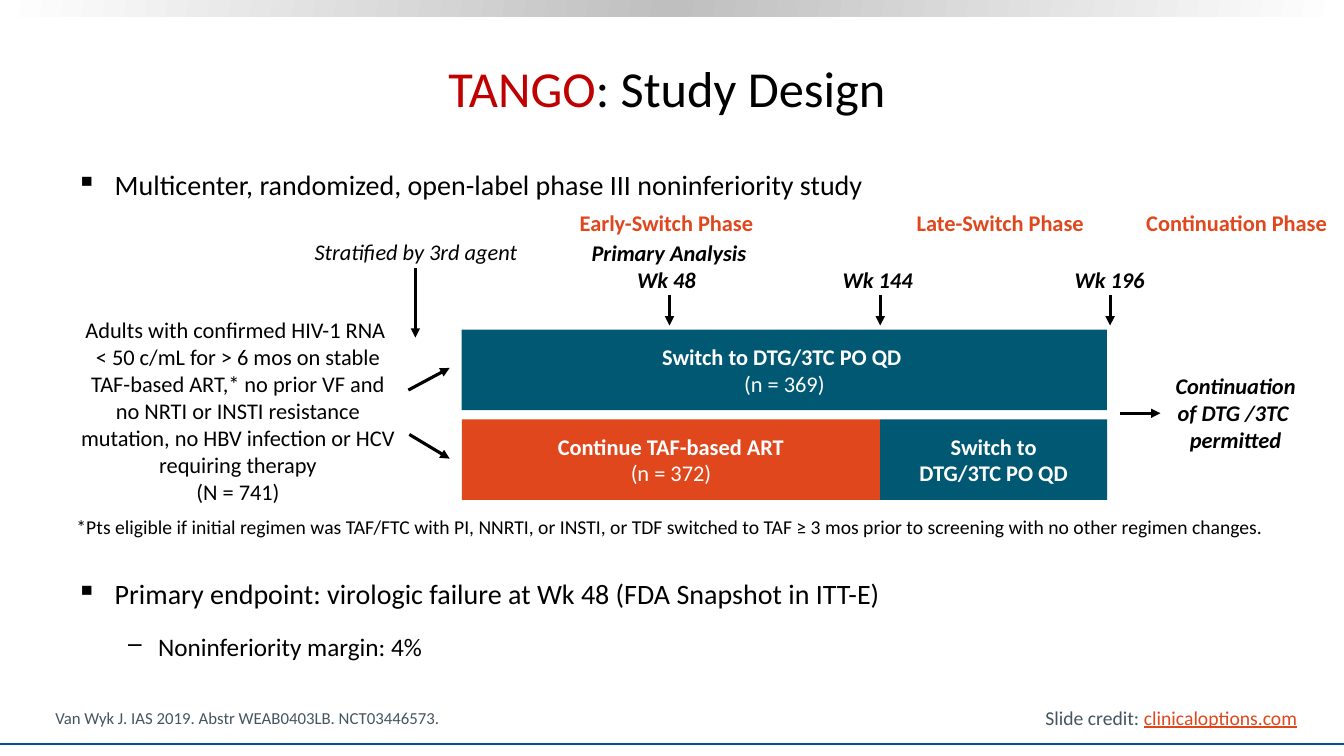
from copy import deepcopy
from dataclasses import dataclass, field

from lxml import etree
from pptx import Presentation
from pptx.dml.color import RGBColor
from pptx.enum.shapes import MSO_CONNECTOR, MSO_SHAPE
from pptx.enum.text import MSO_ANCHOR, PP_ALIGN
from pptx.oxml import parse_xml
from pptx.oxml.ns import nsdecls, qn
from pptx.util import Inches, Pt

RECT = MSO_SHAPE.RECTANGLE
STRAIGHT = MSO_CONNECTOR.STRAIGHT
LEFT, CENTER = PP_ALIGN.LEFT, PP_ALIGN.CENTER
TOP, MIDDLE, BOTTOM = MSO_ANCHOR.TOP, MSO_ANCHOR.MIDDLE, MSO_ANCHOR.BOTTOM

BLACK, WHITE, RED = "000000", "FFFFFF", "C00000"
TEAL, ORANGE, SLATE, BLUE = "015873", "E1471D", "455560", "00539B"
FONT = "Calibri"
WIDTH, HEIGHT = 13.33, 7.5

BOLD = {"bold": True}
PLAIN = {"bold": False}
ITALIC = {"italic": True}
BOLD_ITALIC = BOLD | ITALIC


@dataclass
class Run:
    text: str
    format: dict = field(default_factory=dict)
    color: str = ""


@dataclass
class Bullet:
    char: str
    margin: float
    hang: float


@dataclass
class Para:
    runs: list[Run]
    bullet: Bullet | None = None
    size: float = 0


@dataclass
class Label:
    x: float
    y: float
    w: float
    h: float
    paras: list[Para]
    size: float = 16
    color: str = BLACK
    align: PP_ALIGN = CENTER
    anchor: MSO_ANCHOR = TOP
    wrap: bool = True
    format: dict = field(default_factory=dict)
    fill: str = ""


@dataclass
class Line:
    x1: float
    y1: float
    x2: float
    y2: float
    color: str = BLACK
    width: float = 2.25
    arrow: bool = True


def rgb(color: str) -> RGBColor:
    return RGBColor.from_string(color)


def para(text: str, **fmt) -> Para:
    return Para([Run(text, fmt)])


def set_bullet(p, bullet: Bullet) -> None:
    pPr = p._p.get_or_add_pPr()
    pPr.set("marL", str(Inches(bullet.margin)))
    pPr.set("indent", str(-Inches(bullet.hang)))
    color = etree.SubElement(pPr, qn("a:buClr"))
    etree.SubElement(color, qn("a:srgbClr")).set("val", BLACK)
    etree.SubElement(pPr, qn("a:buChar")).set("char", bullet.char)


def add_run(p, run: Run, label: Label, size: float) -> None:
    """Add a run, turning each newline into a line break of the same format."""
    for i, piece in enumerate(run.text.split("\n")):
        if i:
            p.add_line_break()
        r = p.add_run()
        r.text = piece
        base = {"name": FONT, "size": Pt(size)}
        for name, value in (base | label.format | run.format).items():
            setattr(r.font, name, value)
        r.font.color.rgb = rgb(run.color or label.color)
        if i:
            p._p.findall(qn("a:br"))[-1].append(deepcopy(r._r.rPr))


def add_label(s, label: Label) -> None:
    box = [Inches(v) for v in (label.x, label.y, label.w, label.h)]
    if label.fill:
        sp = s.shapes.add_shape(RECT, *box)
        sp.shadow.inherit = False
        sp.fill.solid()
        sp.fill.fore_color.rgb = rgb(label.fill)
        sp.line.fill.background()
    else:
        sp = s.shapes.add_textbox(*box)
    tf = sp.text_frame
    tf.word_wrap = label.wrap
    tf.vertical_anchor = label.anchor
    for i, item in enumerate(label.paras):
        p = tf.add_paragraph() if i else tf.paragraphs[0]
        p.alignment = label.align
        if item.bullet:
            p.line_spacing = 0.9
            p.space_before = Pt(10 if i else 0)
            p.space_after = Pt(7)
            set_bullet(p, item.bullet)
        for run in item.runs:
            add_run(p, run, label, item.size or label.size)


def add_line(s, line: Line) -> None:
    ends = [Inches(v) for v in (line.x1, line.y1, line.x2, line.y2)]
    cx = s.shapes.add_connector(STRAIGHT, *ends)
    cx.line.color.rgb = rgb(line.color)
    cx.line.width = Pt(line.width)
    if line.arrow:
        etree.SubElement(cx.line._get_or_add_ln(), qn("a:tailEnd")).set("type", "triangle")
    etree.SubElement(cx._element.spPr, qn("a:effectLst"))


def add_banner(s) -> None:
    """Add the gradient strip along the top edge."""
    sp = s.shapes.add_shape(RECT, 0, 0, Inches(WIDTH), Inches(0.16))
    sp.shadow.inherit = False
    sp.line.fill.background()
    stops = "".join(
        f'<a:gs pos="{pos}"><a:srgbClr val="{color}"/></a:gs>'
        for pos, color in ((0, WHITE), (50000, "BFBFBF"), (100000, WHITE)))
    grad = parse_xml(f'<a:gradFill {nsdecls("a")} rotWithShape="1"><a:gsLst>{stops}</a:gsLst>'
                     f'<a:lin ang="{190 * 60000}" scaled="0"/></a:gradFill>')
    sp._element.spPr.find(qn("a:prstGeom")).addnext(grad)


SQUARE, DASH = Bullet("▪", 0.38, 0.38), Bullet("‒", 0.81, 0.31)
BAR_X, WK48_X, WK144_X, WK196_X, BAR_END = 4.58, 6.64, 8.73, 11.01, 10.98
BAR_H, SWITCH_Y, CONTINUE_Y = 0.8, 3.27, 4.16


def bar(x: float, y: float, end: float, fill: str, *paras: Para) -> Label:
    return Label(x, y, end - x, BAR_H, list(paras), color=WHITE, anchor=MIDDLE,
                 wrap=False, format=BOLD, fill=fill)


def phase(x: float, w: float, text: str) -> Label:
    return Label(x, 2.03, w, 0.37, [para(text)], color=ORANGE, format=BOLD)


LABELS = [
    Label(0.67, 0.26, 11.89, 1.21, [Para([Run("TANGO", color=RED), Run(": Study Design")])],
          size=36, anchor=MIDDLE),
    Label(0.66, 1.65, 11.9, 0.46, [Para([Run(
        "Multicenter, randomized, open-label phase III noninferiority study")], SQUARE)],
        size=20, align=LEFT),
    Label(0.66, 5.71, 12.14, 1.16, [
        Para([Run("Primary endpoint: virologic failure at Wk 48 (FDA Snapshot in ITT-E)")], SQUARE),
        Para([Run("Noninferiority margin: 4%")], DASH, 18)], size=20, align=LEFT),
    phase(5.62, 1.98, "Early-Switch Phase"),
    phase(8.93, 1.98, "Late-Switch Phase"),
    phase(11.21, 2.11, "Continuation Phase"),
    Label(2.77, 2.31, 2.71, 0.37, [para("Stratified by 3rd agent")], format=ITALIC),
    Label(5.76, 2.32, 1.75, 0.64, [para("Primary Analysis"), para("Wk 48 ")],
          wrap=False, format=BOLD_ITALIC),
    Label(8.25, 2.59, 0.96, 0.37, [para("Wk 144 ")], wrap=False, format=BOLD_ITALIC),
    Label(10.56, 2.59, 0.9, 0.37, [para("Wk 196")], align=LEFT, wrap=False, format=BOLD_ITALIC),
    Label(0.67, 3.09, 3.38, 1.99, [
        para("Adults with confirmed HIV-1 RNA \n< 50 c/mL for > 6 mos on stable TAF-based ART,* "
             "no prior VF and no NRTI or INSTI resistance mutation, no HBV infection or HCV "
             "requiring therapy"), para("(N = 741)")]),
    bar(BAR_X, SWITCH_Y, BAR_END, TEAL, para("Switch to DTG/3TC PO QD "), para("(n = 369)", **PLAIN)),
    bar(BAR_X, CONTINUE_Y, WK144_X, ORANGE, para("Continue TAF-based ART"),
        para("(n = 372)", **PLAIN)),
    bar(WK144_X, CONTINUE_Y, BAR_END, TEAL, para("Switch to\nDTG/3TC PO QD")),
    Label(11.47, 3.64, 1.57, 0.91, [para("Continuation of DTG /3TC \npermitted")],
          format=BOLD_ITALIC),
    Label(0.66, 5.06, 12.01, 0.34, [para(
        "*Pts eligible if initial regimen was TAF/FTC with PI, NNRTI, or INSTI, or TDF switched "
        "to TAF ≥ 3 mos prior to screening with no other regimen changes.")], size=14, align=LEFT),
    Label(0.45, 6.97, 8.59, 0.3, [para("Van Wyk J. IAS 2019. Abstr WEAB0403LB. NCT03446573.")],
          size=12, color=SLATE, align=LEFT, anchor=BOTTOM),
    Label(10.27, 6.95, 2.72, 0.34, [Para([
        Run("Slide credit: "), Run("clinicaloptions.com", {"underline": True}, ORANGE)])],
        size=14, color=SLATE, align=LEFT, wrap=False),
]
LINES = [
    Line(0, 7.38, WIDTH, 7.38, BLUE, 1.5, False),
    Line(4.12, 2.66, 4.12, 3.35),
    Line(4.05, 3.87, 4.46, 3.65),
    Line(4.06, 4.31, 4.46, 4.55),
    Line(11.11, 4.1, 11.51, 4.1),
    *(Line(x, 2.93, x, 3.23) for x in (WK48_X, WK144_X, WK196_X)),
]


def main() -> None:
    prs = Presentation()
    prs.slide_width, prs.slide_height = Inches(WIDTH), Inches(HEIGHT)
    s = prs.slides.add_slide(prs.slide_layouts[6])
    add_banner(s)
    for label in LABELS:
        add_label(s, label)
    for line in LINES:
        add_line(s, line)
    prs.save("out.pptx")


if __name__ == "__main__":
    main()
